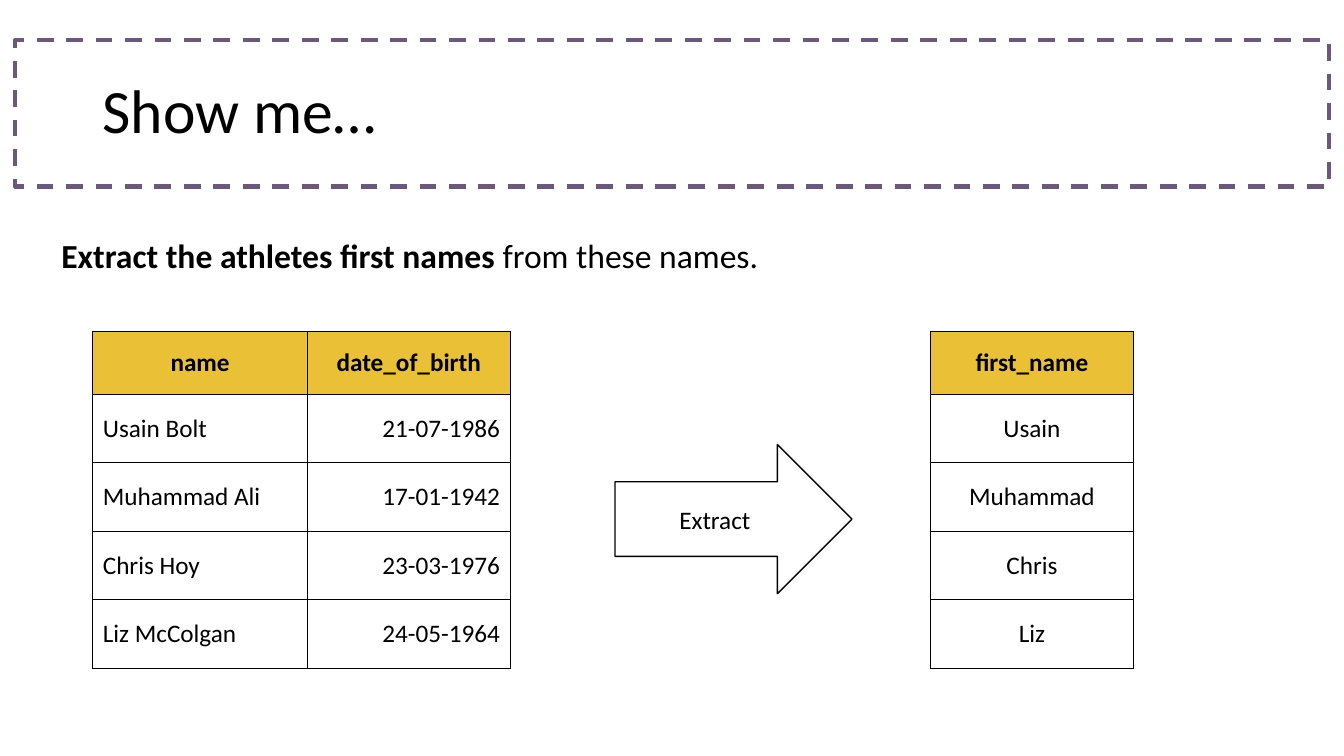
"""Build a slide that shows first names being extracted from a table of athletes."""
import lxml.etree
import pptx
import pptx.dml.color
import pptx.enum.dml
import pptx.enum.shapes
import pptx.enum.text
import pptx.oxml.ns
import pptx.util

PX = 9144
SLIDE_SIZE = (1333, 750)
FONT = "Calibri"
BLACK = pptx.dml.color.RGBColor(0x00, 0x00, 0x00)
WHITE = pptx.dml.color.RGBColor(0xFF, 0xFF, 0xFF)
PURPLE = pptx.dml.color.RGBColor(0x6C, 0x58, 0x7C)
GOLD = pptx.dml.color.RGBColor(0xEA, 0xC0, 0x36)

LEFT = pptx.enum.text.PP_ALIGN.LEFT
CENTER = pptx.enum.text.PP_ALIGN.CENTER
RIGHT = pptx.enum.text.PP_ALIGN.RIGHT
MIDDLE = pptx.enum.text.MSO_ANCHOR.MIDDLE
TOP = pptx.enum.text.MSO_ANCHOR.TOP

TITLE = "Show me…"
TASK = [("Extract the athletes first names", True), (" from these names.", False)]
STEP = "Extract"
ATHLETES = [
    ("name", "date_of_birth"),
    ("Usain Bolt", "21-07-1986"),
    ("Muhammad Ali", "17-01-1942"),
    ("Chris Hoy", "23-03-1976"),
    ("Liz McColgan", "24-05-1964"),
]
FIRST_NAMES = [("first_name",)] + [(name.split()[0],) for name, _ in ATHLETES[1:]]

FRAME_BOX = (15, 40, 1303, 145)
TITLE_BOX = (92, 40, 1150, 145)
TASK_BOX = (51, 228, 1191, 50)
ARROW_BOX = (610, 441, 235, 148)
TABLE_TOP = 329
HEADER_HEIGHT, ROW_HEIGHT = 62, 68
TABLES = [
    (92, (213, 201), (LEFT, RIGHT), ATHLETES),
    (923, (201,), (CENTER,), FIRST_NAMES),
]


def emu(lengths):
    return [length * PX for length in lengths]


def write(frame, runs, size, align=LEFT, anchor=TOP):
    frame.word_wrap = True
    frame.vertical_anchor = anchor
    paragraph = frame.paragraphs[0]
    paragraph.alignment = align
    for words, bold in runs:
        run = paragraph.add_run()
        run.text = words
        run.font.name = FONT
        run.font.size = pptx.util.Pt(size)
        run.font.bold = bold
        run.font.color.rgb = BLACK
    return paragraph


def add_outlined(slide, preset, box, color, width):
    shape = slide.shapes.add_shape(preset, *emu(box))
    shape.shadow.inherit = False
    shape.line.color.rgb = color
    shape.line.width = pptx.util.Pt(width)
    return shape


def add_borders(cell):
    properties = cell._tc.get_or_add_tcPr()
    qn = pptx.oxml.ns.qn
    for position, side in enumerate(("a:lnL", "a:lnR", "a:lnT", "a:lnB")):
        border = lxml.etree.Element(qn(side), w=str(pptx.util.Pt(1)))
        fill = lxml.etree.SubElement(border, qn("a:solidFill"))
        lxml.etree.SubElement(fill, qn("a:srgbClr"), val=str(BLACK))
        properties.insert(position, border)


def add_table(slide, left, widths, aligns, rows):
    heights = [HEADER_HEIGHT] + [ROW_HEIGHT] * (len(rows) - 1)
    box = (left, TABLE_TOP, sum(widths), sum(heights))
    table = slide.shapes.add_table(len(rows), len(widths), *emu(box)).table
    table.horz_banding = False
    table.first_row = False
    for column, width in zip(table.columns, emu(widths)):
        column.width = width
    for row, height in zip(table.rows, emu(heights)):
        row.height = height
    for r, values in enumerate(rows):
        header = r == 0
        for c, value in enumerate(values):
            cell = table.cell(r, c)
            if header:
                cell.fill.solid()
                cell.fill.fore_color.rgb = GOLD
            else:
                cell.fill.background()
            add_borders(cell)
            write(cell.text_frame, [(value, header)], 18, CENTER if header else aligns[c])
            cell.vertical_anchor = MIDDLE


def main():
    deck = pptx.Presentation()
    deck.slide_width, deck.slide_height = emu(SLIDE_SIZE)
    slide = deck.slides.add_slide(deck.slide_layouts[6])
    presets = pptx.enum.shapes.MSO_SHAPE

    frame = add_outlined(slide, presets.RECTANGLE, FRAME_BOX, PURPLE, 3)
    frame.fill.background()
    frame.line.dash_style = pptx.enum.dml.MSO_LINE.DASH

    title = slide.shapes.add_textbox(*emu(TITLE_BOX))
    write(title.text_frame, [(TITLE, False)], 44, anchor=MIDDLE).line_spacing = 0.9
    task = slide.shapes.add_textbox(*emu(TASK_BOX))
    write(task.text_frame, TASK, 24)

    for layout in TABLES:
        add_table(slide, *layout)

    arrow = add_outlined(slide, presets.RIGHT_ARROW, ARROW_BOX, BLACK, 1)
    arrow.fill.solid()
    arrow.fill.fore_color.rgb = WHITE
    write(arrow.text_frame, [(STEP, False)], 18, CENTER, MIDDLE)

    deck.save("out.pptx")


if __name__ == "__main__":
    main()
